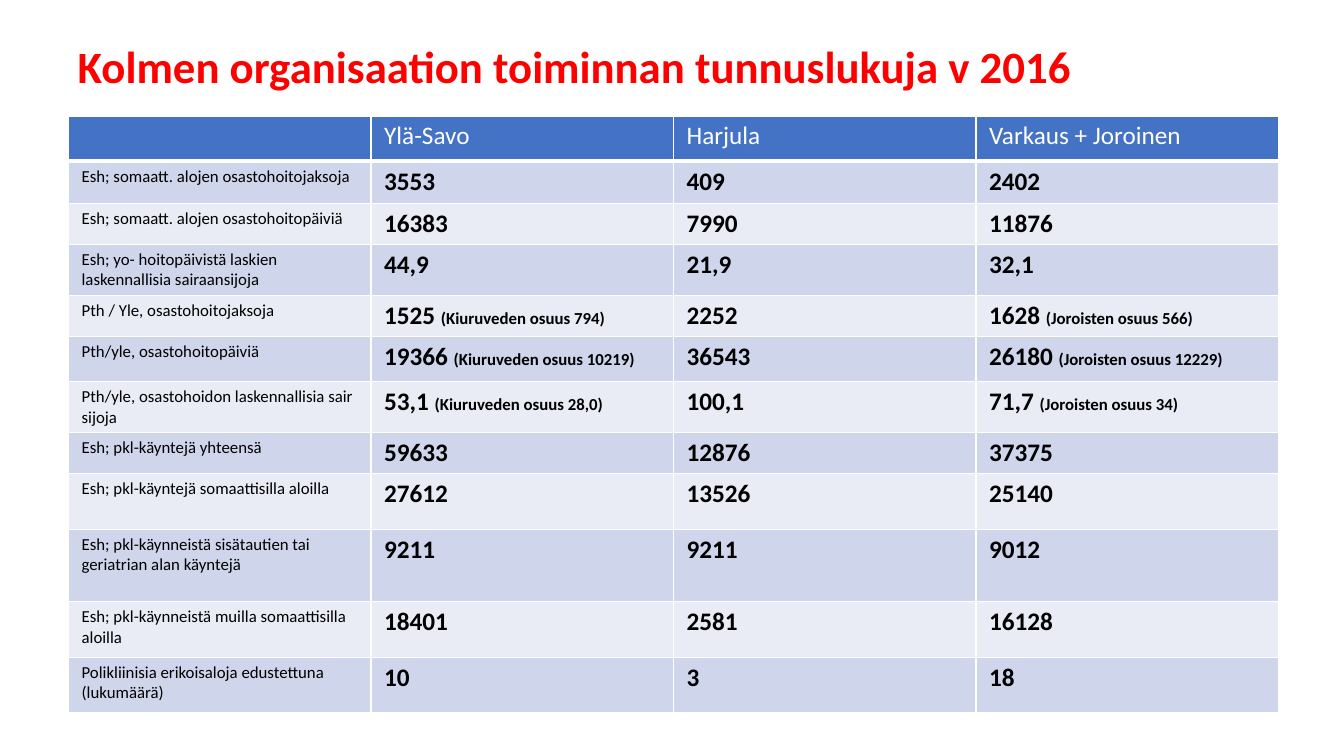
from lxml import etree
from pptx import Presentation
from pptx.dml.color import RGBColor
from pptx.enum.text import MSO_ANCHOR, MSO_AUTO_SIZE, PP_ALIGN
from pptx.oxml.ns import qn
from pptx.util import Inches, Pt

MIDDLE = MSO_ANCHOR.MIDDLE
NO_FIT = MSO_AUTO_SIZE.NONE
LEFT = PP_ALIGN.LEFT
FONT = "Calibri"
COLORS = {
    "title": "FF0000",
    "header": "4472C4",
    "odd": "CFD5EA",
    "even": "E9EBF5",
    "line": "FFFFFF",
    "header_text": "FFFFFF",
    "text": "000000",
}
TITLE = "Kolmen organisaation toiminnan tunnuslukuja v 2016"
HEADERS = ["", "Ylä-Savo", "Harjula", "Varkaus + Joroinen"]
FIGURES = [
    ("Esh; somaatt. alojen osastohoitojaksoja", "3553", "409", "2402"),
    ("Esh; somaatt. alojen osastohoitopäiviä", "16383", "7990", "11876"),
    ("Esh; yo- hoitopäivistä laskien laskennallisia sairaansijoja", "44,9", "21,9", "32,1"),
    ("Pth / Yle, osastohoitojaksoja", "1525 (Kiuruveden osuus 794)", "2252",
     "1628 (Joroisten osuus 566)"),
    ("Pth/yle, osastohoitopäiviä", "19366 (Kiuruveden osuus 10219)", "36543",
     "26180 (Joroisten osuus 12229)"),
    ("Pth/yle, osastohoidon laskennallisia sair sijoja", "53,1 (Kiuruveden osuus 28,0)",
     "100,1", "71,7 (Joroisten osuus 34)"),
    ("Esh; pkl-käyntejä yhteensä", "59633", "12876", "37375"),
    ("Esh; pkl-käyntejä somaattisilla aloilla", "27612", "13526", "25140"),
    ("Esh; pkl-käynneistä sisätautien tai geriatrian alan käyntejä", "9211", "9211", "9012"),
    ("Esh; pkl-käynneistä muilla somaattisilla aloilla", "18401", "2581", "16128"),
    ("Polikliinisia erikoisaloja edustettuna (lukumäärä)", "10", "3", "18"),
]
ROW_HEIGHTS = [0.45, 0.42, 0.36, 0.47, 0.39, 0.45, 0.46, 0.38, 0.55, 0.72, 0.55, 0.55]


def add_run(para, text, size, color, bold):
    span = para.add_run()
    span.text = text
    span.font.name = FONT
    span.font.size = Pt(size)
    span.font.bold = bold
    span.font.color.rgb = RGBColor.from_string(COLORS[color])


def add_title(page, box):
    title = page.shapes.title
    title.left, title.top, title.width, title.height = [Inches(value) for value in box]
    frame = title.text_frame
    frame.auto_size = NO_FIT
    frame.word_wrap = True
    frame.vertical_anchor = MIDDLE
    para = frame.paragraphs[0]
    para.alignment = LEFT
    para.line_spacing = 0.9
    add_run(para, TITLE, 32, "title", True)


def add_border(cell, side, points):
    line = etree.SubElement(cell._tc.get_or_add_tcPr(), qn(f"a:ln{side}"), w=str(Pt(points)))
    fill = etree.SubElement(line, qn("a:solidFill"))
    etree.SubElement(fill, qn("a:srgbClr"), val=COLORS["line"])


def style_cell(cell, fill, borders):
    cell.margin_left = cell.margin_right = Inches(0.13)
    cell.margin_top = cell.margin_bottom = Inches(0.05)
    for side, points in borders.items():
        add_border(cell, side, points)
    cell.fill.solid()
    cell.fill.fore_color.rgb = RGBColor.from_string(COLORS[fill])


def fill_header(cell, text):
    style_cell(cell, "header", {"L": 1, "R": 1, "T": 1, "B": 3})
    if text:
        add_run(cell.text_frame.paragraphs[0], text, 18, "header_text", False)


def fill_figure(cell, text, fill, is_label):
    style_cell(cell, fill, {"L": 1, "R": 1, "B": 1})
    para = cell.text_frame.paragraphs[0]
    if is_label:
        add_run(para, text, 12, "text", False)
        return
    value, bracket, share = text.partition("(")
    add_run(para, value, 18, "text", True)
    if bracket:
        add_run(para, bracket + share, 12, "text", True)


def add_figures_table(page, box):
    left, top, width, height = [Inches(value) for value in box]
    table = page.shapes.add_table(
        len(ROW_HEIGHTS), len(HEADERS), left, top, width, height).table
    for row, row_height in zip(table.rows, ROW_HEIGHTS):
        row.height = Inches(row_height)
    for column, text in enumerate(HEADERS):
        fill_header(table.cell(0, column), text)
    for row, texts in enumerate(FIGURES, start=1):
        fill = "odd" if row % 2 else "even"
        for column, text in enumerate(texts):
            fill_figure(table.cell(row, column), text, fill, column == 0)


def main():
    deck = Presentation()
    deck.slide_width, deck.slide_height = Inches(13.33), Inches(7.5)
    page = deck.slides.add_slide(deck.slide_layouts[5])
    add_title(page, (0.67, 0.3, 12, 0.77))
    add_figures_table(page, (0.68, 1.15, 12, sum(ROW_HEIGHTS)))
    deck.save("out.pptx")


if __name__ == "__main__":
    main()
